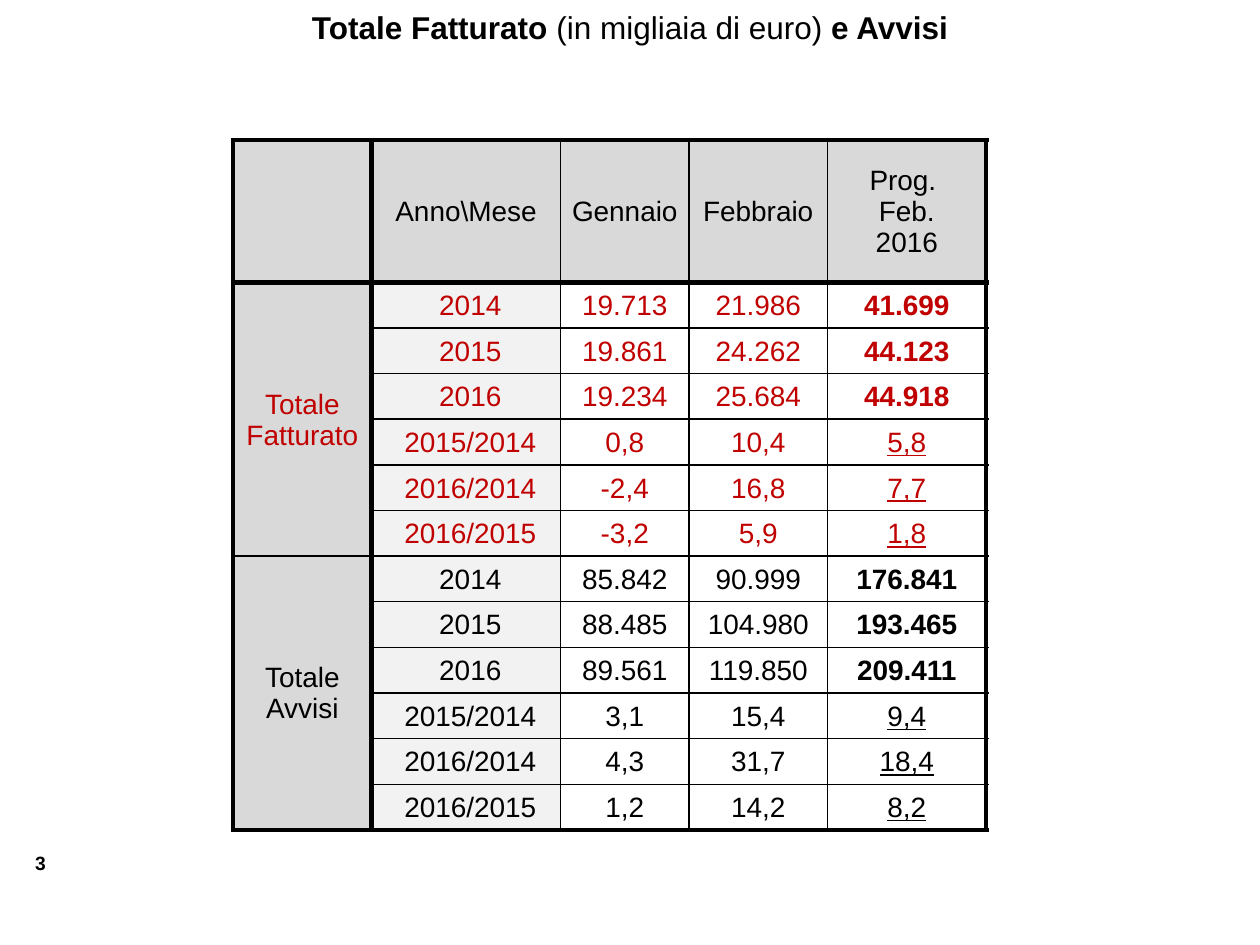
from pptx import Presentation
from pptx.dml.color import RGBColor
from pptx.enum.text import MSO_ANCHOR as ANCHOR, PP_ALIGN as ALIGN
from pptx.oxml import parse_xml
from pptx.oxml.ns import nsdecls
from pptx.util import Cm, Pt

BLACK, RED, GREY, PALE = "000000", "C00000", "D9D9D9", "F2F2F2"
HEADER = ["", "Anno\\Mese", "Gennaio", "Febbraio", "Prog. \nFeb.\n2016"]
PERIODS = ["2014", "2015", "2016", "2015/2014", "2016/2014", "2016/2015"]
GROUPS = [
    ("Totale Fatturato", RED, [
        ("19.713", "21.986", "41.699"), ("19.861", "24.262", "44.123"),
        ("19.234", "25.684", "44.918"), ("0,8", "10,4", "5,8"),
        ("-2,4", "16,8", "7,7"), ("-3,2", "5,9", "1,8")]),
    ("Totale\nAvvisi", BLACK, [
        ("85.842", "90.999", "176.841"), ("88.485", "104.980", "193.465"),
        ("89.561", "119.850", "209.411"), ("3,1", "15,4", "9,4"),
        ("4,3", "31,7", "18,4"), ("1,2", "14,2", "8,2")]),
]
COL_WIDTHS = [2.79, 3.81, 2.59, 2.79, 3.2]
ROW_HEIGHTS = [2.87] + [0.92] * 12
ROW_EDGES = [3, 3] + [1] * 11 + [2.25]
COL_EDGES = [3, 3, 1, 1, 1, 3]


def rgb(value):
    return RGBColor.from_string(value)


class SlideBuilder:
    """Hold the text style and the current slide, and add elements to it."""

    def __init__(self, slide, font="Arial"):
        self.slide, self.font = slide, font

    def format_run(self, r, size, color=BLACK, bold=False, underline=False):
        f = r.font
        f.name, f.size, f.bold, f.underline = self.font, Pt(size), bold, underline
        f.color.rgb = rgb(color)

    def text(self, x, y, w, h, parts, size, align=ALIGN.LEFT):
        tf = self.slide.shapes.add_textbox(Cm(x), Cm(y), Cm(w), Cm(h)).text_frame
        tf.word_wrap = True
        p = tf.paragraphs[0]
        p.alignment = align
        for text, bold in parts:
            r = p.add_run()
            r.text = text
            self.format_run(r, size, bold=bold)

    def table(self, x, y, widths, heights):
        frame = self.slide.shapes.add_table(
            len(heights), len(widths), Cm(x), Cm(y), Cm(sum(widths)), Cm(sum(heights)))
        table = frame.table
        table.first_row = table.horz_banding = False
        for col, width in zip(table.columns, widths):
            col.width = Cm(width)
        for row, height in zip(table.rows, heights):
            row.height = Cm(height)
        return table

    def borders(self, cell, **widths):
        tc_pr = cell._tc.get_or_add_tcPr()
        for side, width in widths.items():
            tc_pr.append(parse_xml(
                f'<a:ln{side} {nsdecls("a")} w="{int(Pt(width))}"><a:solidFill>'
                f'<a:srgbClr val="{BLACK}"/></a:solidFill></a:ln{side}>'))

    def cell(self, table, row, col, text, fill=None, indent=0.03, **style):
        cell = table.cell(row, col)
        cell.vertical_anchor = ANCHOR.MIDDLE
        cell.margin_left, cell.margin_right = Cm(indent), Cm(0.03)
        cell.margin_top, cell.margin_bottom = Cm(0.03), Cm(0)
        bottom = row + (cell.span_height if cell.is_merge_origin else 1)
        self.borders(cell, L=COL_EDGES[col], R=COL_EDGES[col + 1],
                     T=ROW_EDGES[row], B=ROW_EDGES[bottom])
        if fill:
            cell.fill.solid()
            cell.fill.fore_color.rgb = rgb(fill)
        else:
            cell.fill.background()
        cell.text_frame.text = text
        for p in cell.text_frame.paragraphs:
            p.alignment = ALIGN.CENTER
            for r in p.runs:
                self.format_run(r, 16, **style)


def main():
    prs = Presentation()
    prs.slide_width, prs.slide_height = Cm(25.4), Cm(19.05)
    s = SlideBuilder(prs.slides.add_slide(prs.slide_layouts[6]))

    s.text(0.46, 17.04, 1.07, 0.74, [("3", True)], 11)
    table = s.table(4.7, 2.82, COL_WIDTHS, ROW_HEIGHTS)
    for col, text in enumerate(HEADER):
        s.cell(table, 0, col, text, GREY)
    for g, (name, color, rows) in enumerate(GROUPS):
        top = 1 + g * len(PERIODS)
        table.cell(top, 0).merge(table.cell(top + len(PERIODS) - 1, 0))
        s.cell(table, top, 0, name, GREY, color=color)
        for i, (period, (january, february, total)) in enumerate(zip(PERIODS, rows)):
            row, is_ratio = top + i, "/" in period
            s.cell(table, row, 1, period, PALE, indent=0.2, color=color)
            s.cell(table, row, 2, january, color=color)
            s.cell(table, row, 3, february, color=color)
            s.cell(table, row, 4, total, color=color,
                   bold=not is_ratio, underline=is_ratio)
    s.text(0, 0.03, 25.4, 1.02, [("Totale Fatturato ", True),
           ("(in migliaia di euro)", False), (" e Avvisi", True)], 18, ALIGN.CENTER)
    prs.save("out.pptx")


if __name__ == "__main__":
    main()
